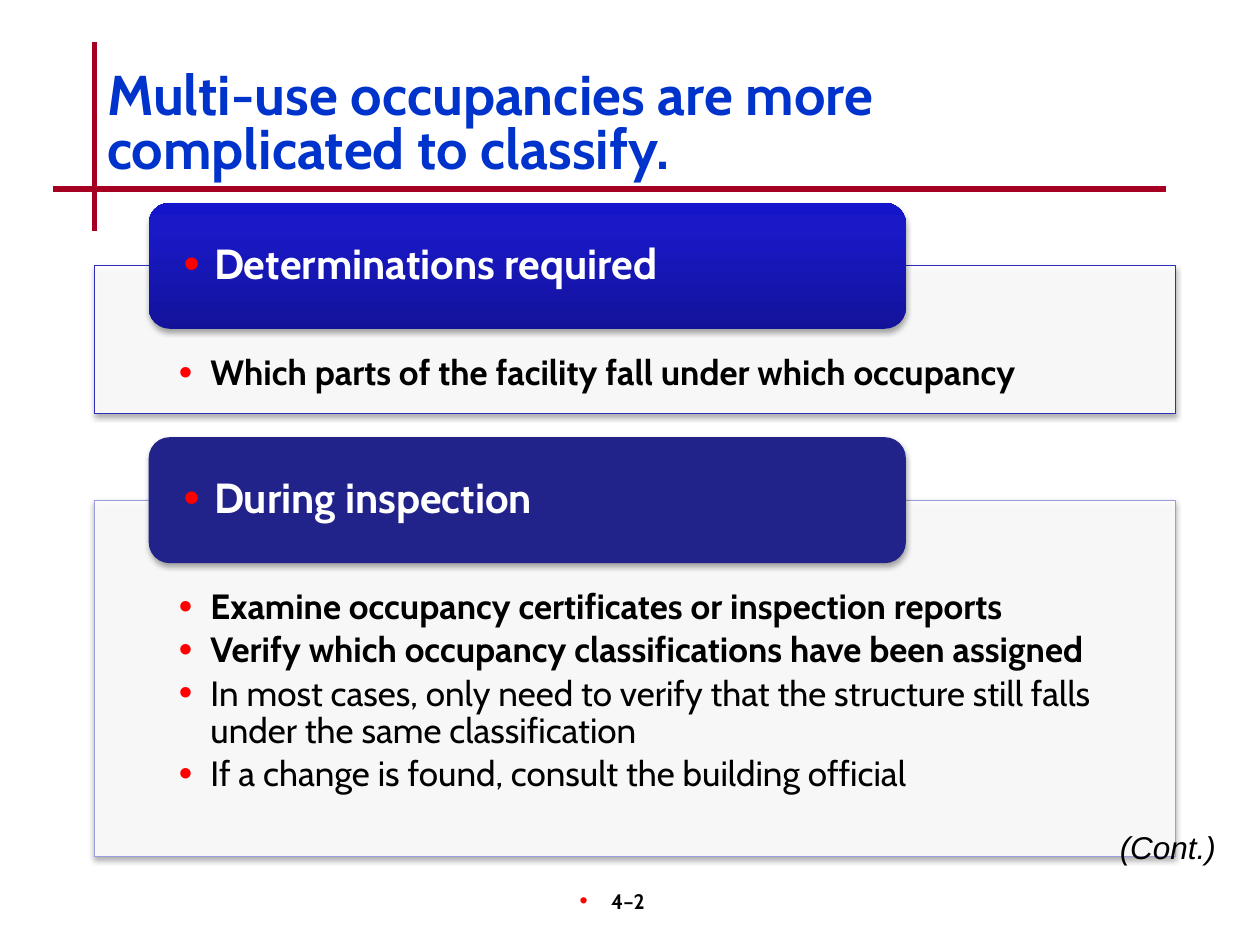
from lxml import etree
from pptx import Presentation
from pptx import util as u
from pptx.dml.color import RGBColor
from pptx.enum import shapes, text
from pptx.oxml import parse_xml
from pptx.oxml.ns import nsdecls, qn

WHITE = RGBColor(0xFF, 0xFF, 0xFF)
BLACK = RGBColor(0, 0, 0)
RED = RGBColor(0xFF, 0, 0)
CRIMSON = RGBColor(0xA5, 0x00, 0x21)
TITLE_BLUE = RGBColor(0x00, 0x33, 0xCC)
PANEL_BLUE = RGBColor(0x2E, 0x2E, 0xB9)
PANEL_LILAC = RGBColor(0x9C, 0x9C, 0xDD)
NAVY = RGBColor(0x22, 0x22, 0x8B)
BLUE_STOPS = [(0, RGBColor(0x13, 0x13, 0x9A)), (80, RGBColor(0x19, 0x19, 0xC8)),
              (100, RGBColor(0x15, 0x15, 0xCC))]

PANEL_LEFT, PANEL_WIDTH = 0.75, 8.58
HEADER_RISE = 0.5  # how far a header stands above its panel


def add_bullet(para, indent):
    props = para._p.get_or_add_pPr()
    props.set("marL", str(u.Inches(indent)))
    props.set("indent", str(-u.Inches(indent)))
    color = etree.SubElement(props, qn("a:buClr"))
    etree.SubElement(color, qn("a:srgbClr"), val=str(RED))
    etree.SubElement(props, qn("a:buSzPct"), val="110000")
    etree.SubElement(props, qn("a:buFont"), typeface="Arial")
    etree.SubElement(props, qn("a:buChar"), char="•")


def write(para, wording, size, color=BLACK, font="Cabin", bold=True, italic=False,
          align=text.PP_ALIGN.LEFT, spacing=1.0, after=0, bullet=None):
    if bullet:
        add_bullet(para, bullet)
    para.alignment = align
    para.line_spacing = spacing
    para.space_before = u.Pt(0)
    para.space_after = u.Pt(after)
    span = para.add_run()
    span.text = wording
    style = span.font
    style.name, style.size, style.bold, style.italic = font, u.Pt(size), bold, italic
    style.color.rgb = color


def set_frame(frame, insets=(0.1, 0.05, 0.1, 0.05), anchor=text.MSO_ANCHOR.TOP):
    frame.word_wrap = True
    frame.auto_size = text.MSO_AUTO_SIZE.NONE
    frame.vertical_anchor = anchor
    (frame.margin_left, frame.margin_top,
     frame.margin_right, frame.margin_bottom) = map(u.Inches, insets)


def place(shape, *bounds):
    shape.left, shape.top, shape.width, shape.height = map(u.Inches, bounds)


def add_soft_shadow(shape):
    shape._element.spPr.append(parse_xml(
        f'<a:effectLst {nsdecls("a")}>'
        f'<a:outerShdw blurRad="{u.Pt(3.1)}" dist="{u.Pt(1.8)}" dir="5400000" rotWithShape="0">'
        '<a:srgbClr val="000000"><a:alpha val="35000"/></a:srgbClr>'
        '</a:outerShdw></a:effectLst>'))


def fill_gradient(shape, stops):
    marks = "".join(f'<a:gs pos="{pos * 1000}"><a:srgbClr val="{color}"/></a:gs>'
                    for pos, color in stops)
    shape._element.spPr.find(qn("a:prstGeom")).addnext(parse_xml(
        f'<a:gradFill rotWithShape="1" {nsdecls("a")}><a:gsLst>{marks}</a:gsLst>'
        '<a:lin ang="16200000" scaled="0"/></a:gradFill>'))


class SlideBuilder:
    def __init__(self, slide):
        self.slide = slide

    def rule(self, x1, y1, x2, y2):
        line = self.slide.shapes.add_connector(
            shapes.MSO_CONNECTOR.STRAIGHT, *map(u.Inches, (x1, y1, x2, y2)))
        line.line.color.rgb = CRIMSON
        line.line.width = u.Pt(3)
        etree.SubElement(line._element.spPr, qn("a:effectLst"))

    def title(self, wording):
        title = self.slide.shapes.title
        place(title, 0.75, 0.5, 8.5, 1)
        set_frame(title.text_frame, anchor=text.MSO_ANCHOR.MIDDLE)
        write(title.text_frame.paragraphs[0], wording, 32, TITLE_BLUE, spacing=0.8)

    def shape(self, kind, *bounds):
        return self.slide.shapes.add_shape(kind, *map(u.Inches, bounds))

    def panel(self, top, height, border):
        panel = self.shape(shapes.MSO_SHAPE.RECTANGLE, PANEL_LEFT, top, PANEL_WIDTH, height)
        panel.fill.solid()
        panel.fill.fore_color.rgb = WHITE
        color = panel._element.spPr.find(qn("a:solidFill"))[0]
        etree.SubElement(color, qn("a:alpha"), val="90000")
        panel.line.color.rgb = border
        panel.line.width = u.Pt(0.75)
        add_soft_shadow(panel)

    def bullets(self, index, top, height, items):
        """Fill a body placeholder with (wording, bold) items, in front of its panel."""
        body = self.slide.placeholders[index]
        place(body, PANEL_LEFT, top, PANEL_WIDTH, height)
        self.slide.shapes._spTree.append(body._element)
        frame = body.text_frame
        set_frame(frame, (0.67, 0.71, 0.67, 0.16))
        for number, (wording, bold) in enumerate(items):
            para = frame.add_paragraph() if number else frame.paragraphs[0]
            write(para, wording, 20, bold=bold, spacing=0.9, after=3, bullet=0.25)

    def header(self, top, wording, fill):
        header = self.shape(shapes.MSO_SHAPE.ROUNDED_RECTANGLE, 1.18, top, 6.01, 1)
        if isinstance(fill, list):
            fill_gradient(header, fill)
        else:
            header.fill.solid()
            header.fill.fore_color.rgb = fill
        header.line.fill.background()
        add_soft_shadow(header)
        set_frame(header.text_frame, (0.23, 0.05, 0.28, 0.05), text.MSO_ANCHOR.MIDDLE)
        write(header.text_frame.paragraphs[0], wording, 24, WHITE, spacing=0.9, bullet=0.24)

    def section(self, index, top, height, border, heading, fill, items):
        self.panel(top, height, border)
        self.bullets(index, top, height, items)
        self.header(top - HEADER_RISE, heading, fill)

    def label(self, bounds, wording, size, insets=(0.1, 0.05, 0.1, 0.05), **style):
        box = self.slide.shapes.add_textbox(*map(u.Inches, bounds))
        set_frame(box.text_frame, insets)
        write(box.text_frame.paragraphs[0], wording, size, **style)


def main():
    deck = Presentation()
    deck.slide_width, deck.slide_height = u.Inches(10), u.Inches(7.5)
    two_content = deck.slide_layouts[3]
    page = SlideBuilder(deck.slides.add_slide(two_content))

    page.rule(0.75, 0.33, 0.75, 1.83)
    page.rule(0.42, 1.5, 9.25, 1.5)
    page.title("Multi-use occupancies are more complicated to classify.")
    page.section(1, 2.11, 1.17, PANEL_BLUE, "Determinations required", BLUE_STOPS, [
        ("Which parts of the facility fall under which occupancy", True)])
    page.section(2, 3.97, 2.83, PANEL_LILAC, "During inspection", NAVY, [
        ("Examine occupancy certificates or inspection reports", True),
        ("Verify which occupancy classifications have been assigned", True),
        ("In most cases, only need to verify that the structure still falls "
         "under the same classification", False),
        ("If a change is found, consult the building official", False)])
    page.label((8.08, 6.52, 1.67, 0.4), "(Cont.)", 18, font="Arial", bold=False,
               italic=True, align=text.PP_ALIGN.RIGHT)
    page.label((3.92, 7, 2.08, 0.5), "4–2", 12, insets=(0.1, 0.05, 0.3, 0.05),
               align=text.PP_ALIGN.CENTER, bullet=0.25)
    deck.save("out.pptx")


if __name__ == "__main__":
    main()
